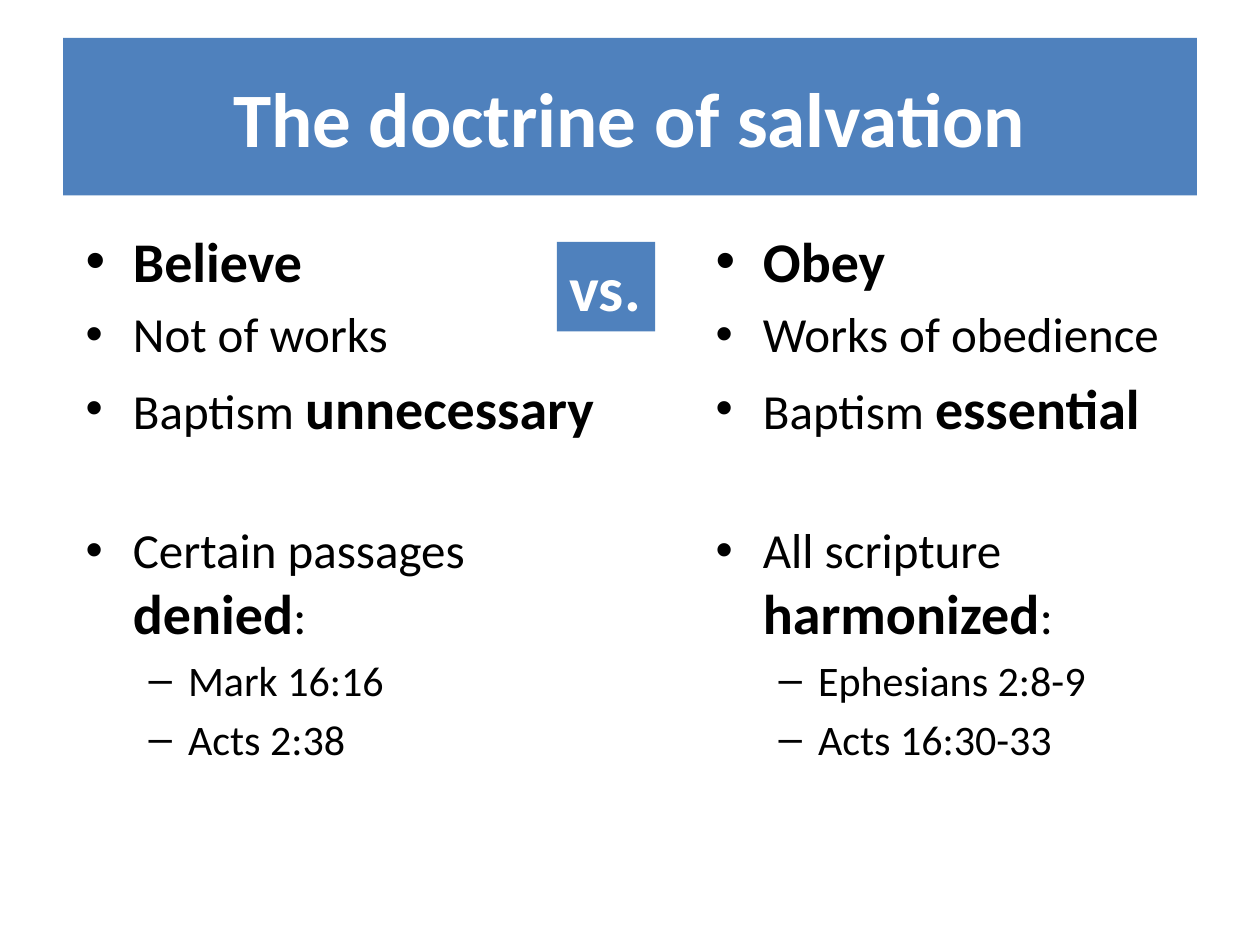
import pptx
import pptx.util
import pptx.dml.color
import pptx.enum.shapes
import pptx.enum.text
from dataclasses import dataclass

Inches, Pt = pptx.util.Inches, pptx.util.Pt
RGB = pptx.dml.color.RGBColor.from_string
Anchor = pptx.enum.text.MSO_ANCHOR
Align = pptx.enum.text.PP_ALIGN
Fit = pptx.enum.text.MSO_AUTO_SIZE


@dataclass(frozen=True)
class Theme:
    font: str = "Calibri"
    blue: str = "4F81BD"
    white: str = "FFFFFF"
    black: str = "000000"
    title: int = 44
    badge: int = 36
    strong: int = 32
    body: int = 28
    sub: int = 24
    gap: int = 45


theme = Theme()


def style(run, size, color, bold):
    font = run.font
    font.name = theme.font
    font.size = Pt(size)
    font.bold = bold
    font.color.rgb = RGB(color)


def paint(shape):
    """Fill a shape with the theme blue."""
    shape.fill.solid()
    shape.fill.fore_color.rgb = RGB(theme.blue)


deck = pptx.Presentation()
deck.slide_width, deck.slide_height = Inches(10), Inches(7.5)
slide = deck.slides.add_slide(deck.slide_layouts.get_by_name("Two Content"))
title, left, right = slide.placeholders

# Title band
title.left, title.top = Inches(0.5), Inches(0.3)
title.width, title.height = Inches(9), Inches(1.25)
paint(title)
title.text_frame.text = "The doctrine of salvation"
title.text_frame.vertical_anchor = Anchor.MIDDLE
style(title.text_frame.paragraphs[0].runs[0], theme.title, theme.white, True)

# Two lists: each line is a level and its parts, with * before a strong part
lists = [
    (left, 0.58, 4.33, [
        (0, ["*Believe"]),
        (0, ["Not of works"]),
        (0, ["Baptism ", "*unnecessary"]),
        (0, ["Certain passages ", "*denied", ":"]),
        (1, ["Mark 16:16"]),
        (1, ["Acts 2:38"]),
    ]),
    (right, 5.58, 4.08, [
        (0, ["*Obey"]),
        (0, ["Works of obedience"]),
        (0, ["Baptism ", "*essential"]),
        (0, ["All scripture ", "*harmonized", ":"]),
        (1, ["Ephesians 2:8-9"]),
        (1, ["Acts 16:30-33"]),
    ]),
]
for body, x, width, lines in lists:
    body.left, body.top = Inches(x), Inches(1.75)
    body.width, body.height = Inches(width), Inches(4.95)
    frame = body.text_frame
    frame.auto_size = Fit.NONE
    for row, (level, parts) in enumerate(lines):
        para = frame.add_paragraph() if row else frame.paragraphs[0]
        para.level = level
        if row == 3:
            para.space_before = Pt(theme.gap)
        for part in parts:
            bold = part.startswith("*")
            size = theme.strong if bold else theme.sub if level else theme.body
            run = para.add_run()
            run.text = part.lstrip("*")
            style(run, size, theme.black, bold)

# Badge between the lists
badge = slide.shapes.add_shape(
    pptx.enum.shapes.MSO_SHAPE.RECTANGLE,
    Inches(4.42), Inches(1.92), Inches(0.78), Inches(0.71))
badge.shadow.inherit = False
paint(badge)
badge.line.fill.background()
frame = badge.text_frame
frame.text = "vs."
frame.word_wrap = False
frame.auto_size = Fit.SHAPE_TO_FIT_TEXT
frame.vertical_anchor = Anchor.TOP
frame.paragraphs[0].alignment = Align.LEFT
style(frame.paragraphs[0].runs[0], theme.badge, theme.white, True)

deck.save("out.pptx")
